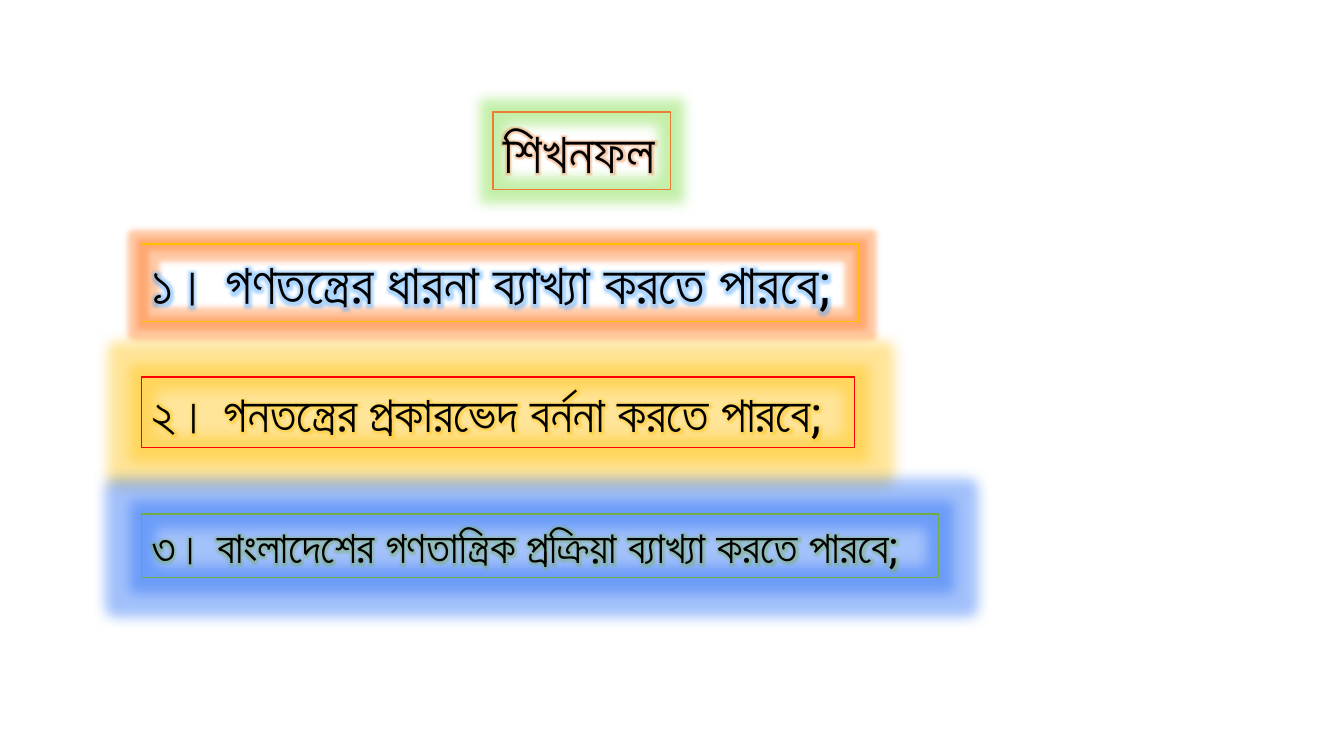
from dataclasses import dataclass
from typing import Optional

from lxml.etree import SubElement
from pptx import Presentation
from pptx.dml.color import RGBColor
from pptx.enum.shapes import MSO_SHAPE
from pptx.enum.text import MSO_ANCHOR, MSO_AUTO_SIZE, PP_ALIGN
from pptx.oxml.ns import qn
from pptx.util import Emu, Pt

PX = 9071  # EMU in one px, at 100.8 px to the inch
FONT = "Roboto"

BLACK = RGBColor(0x00, 0x00, 0x00)
RED = RGBColor(0xFF, 0x00, 0x00)
DARK_RED = RGBColor(0xC0, 0x00, 0x00)
ORANGE = RGBColor(0xED, 0x7D, 0x31)
GOLD = RGBColor(0xFF, 0xC0, 0x00)
GREEN = RGBColor(0x70, 0xAD, 0x47)
LIME_GLOW = RGBColor(0x6D, 0xD9, 0x2B)
PEACH_GLOW = RGBColor(0xFF, 0x78, 0x20)
AMBER_GLOW = RGBColor(0xFF, 0xBF, 0x00)
BLUE_GLOW = RGBColor(0x19, 0x66, 0xF5)
SKY_GLOW = RGBColor(0x30, 0x98, 0xFF)


@dataclass
class Glow:
    color: RGBColor
    radius: int  # points


@dataclass
class Box:
    text: str
    left: int
    top: int
    width: int
    height: int
    size: int
    border: RGBColor
    box_glow: Glow
    text_glow: Glow
    outline: Optional[RGBColor] = None


TITLE = Box("শিখনফল", 493, 112, 178, 78, 40, ORANGE,
            Glow(LIME_GLOW, 18), Glow(ORANGE, 5))

OUTCOMES = [
    Box("১। গণতন্ত্রের ধারনা ব্যাখ্যা করতে পারবে;", 142, 244, 717, 78, 40, GOLD,
        Glow(PEACH_GLOW, 8), Glow(SKY_GLOW, 8), BLACK),
    Box("২। গনতন্ত্রের প্রকারভেদ বর্ননা করতে পারবে;", 142, 377, 713, 71, 36, RED,
        Glow(AMBER_GLOW, 18), Glow(AMBER_GLOW, 8), DARK_RED),
    Box("৩। বাংলাদেশের গণতান্ত্রিক প্রক্রিয়া ব্যাখ্যা করতে পারবে;", 142, 514, 797, 64, 32, GREEN,
        Glow(BLUE_GLOW, 18), Glow(GREEN, 8), GREEN),
]


def add_solid_fill(parent, color: RGBColor, alpha: int = 100) -> None:
    fill = SubElement(parent, qn("a:solidFill"))
    add_color(fill, color, alpha)


def add_color(parent, color: RGBColor, alpha: int) -> None:
    element = SubElement(parent, qn("a:srgbClr"), val=str(color))
    if alpha < 100:
        SubElement(element, qn("a:alpha"), val=str(alpha * 1000))


def add_glow(properties, glow: Glow) -> None:
    effects = properties.find(qn("a:effectLst"))
    if effects is None:
        effects = SubElement(properties, qn("a:effectLst"))
    element = SubElement(effects, qn("a:glow"), rad=str(Pt(glow.radius)))
    add_color(element, glow.color, 40)


def format_box(shape, box: Box) -> None:
    # Frame
    shape.left, shape.top = Emu(box.left * PX), Emu(box.top * PX)
    shape.width, shape.height = Emu(box.width * PX), Emu(box.height * PX)
    shape.fill.background()
    shape.line.color.rgb = box.border
    shape.line.width = Pt(0.75)
    shape.shadow.inherit = False
    add_glow(shape._element.spPr, box.box_glow)

    # Text
    frame = shape.text_frame
    frame.word_wrap = True
    frame.auto_size = MSO_AUTO_SIZE.NONE
    frame.vertical_anchor = MSO_ANCHOR.TOP
    paragraph = frame.paragraphs[0]
    paragraph.alignment = PP_ALIGN.LEFT
    paragraph.line_spacing = 1.0
    paragraph.space_before = Pt(0)
    run = paragraph.add_run()
    run.text = box.text
    run.font.size = Pt(box.size)

    # Letter outline, fill and glow, in schema order, before the typeface
    properties = run._r.get_or_add_rPr()
    if box.outline is not None:
        line = SubElement(properties, qn("a:ln"), w=str(Pt(0.75)))
        add_solid_fill(line, box.outline)
    add_solid_fill(properties, BLACK)
    add_glow(properties, box.text_glow)
    run.font.name = FONT


def main() -> None:
    presentation = Presentation()
    presentation.slide_width = Emu(1344 * PX)
    presentation.slide_height = Emu(756 * PX)
    slide = presentation.slides.add_slide(presentation.slide_layouts[5])

    format_box(slide.shapes.title, TITLE)
    for outcome in OUTCOMES:
        shape = slide.shapes.add_shape(MSO_SHAPE.RECTANGLE, 0, 0, 0, 0)
        format_box(shape, outcome)

    presentation.save("out.pptx")


if __name__ == "__main__":
    main()
